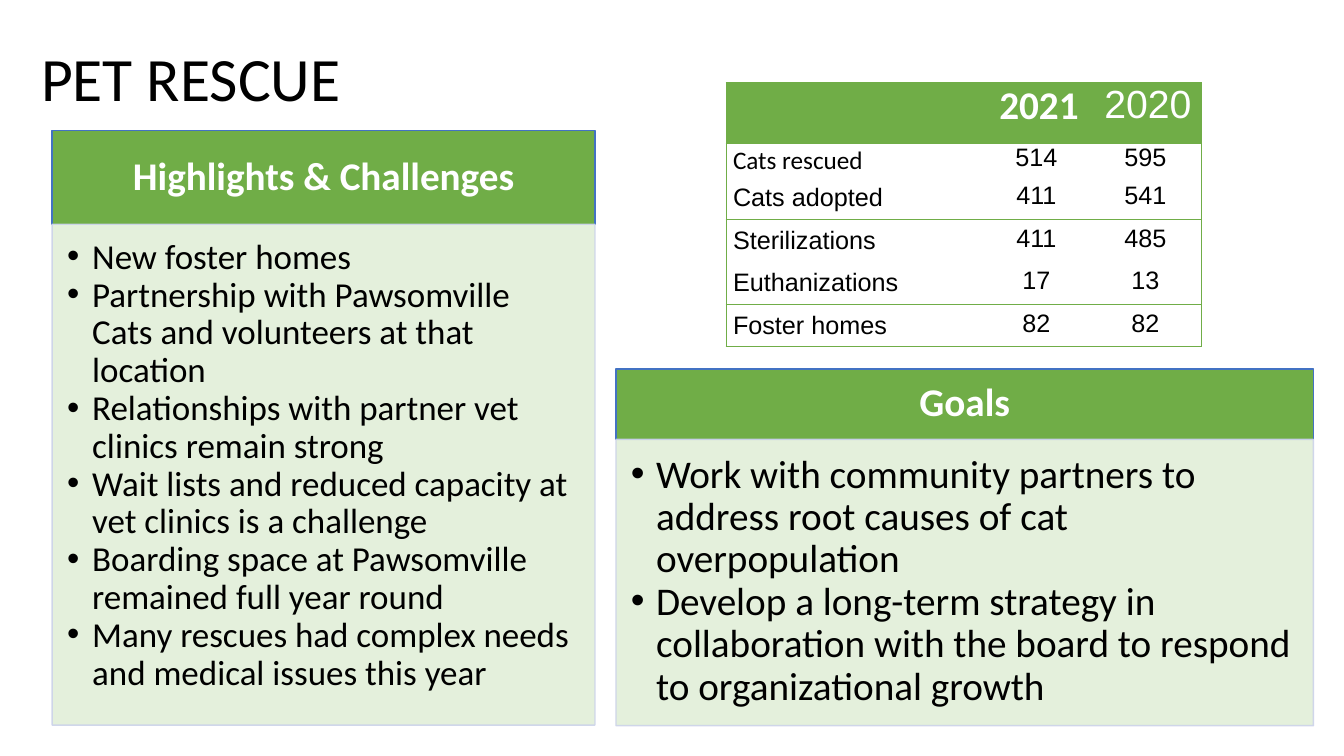
"""Build the pet rescue slide with two bulleted panels and a yearly table."""
from lxml.etree import SubElement
from pptx import Presentation
from pptx.dml.color import RGBColor
from pptx.enum.shapes import MSO_SHAPE as SHAPE
from pptx.enum.text import MSO_ANCHOR as ANCHOR, PP_ALIGN as ALIGN
from pptx.oxml.ns import qn
from pptx.util import Pt

COLORS = {
    "green": "70AD47", "pale": "E1EFD8", "blue": "4372C3",
    "edge": "CCD3EA", "white": "FFFFFF", "black": "000000",
}


def add_text(paragraph, text, size, color, font="Calibri", bold=False):
    run = paragraph.add_run()
    run.text = text
    run.font.name = font
    run.font.size = Pt(size)
    run.font.bold = bold
    run.font.color.rgb = RGBColor.from_string(COLORS[color])


def set_margins(target, left, top, right, bottom):
    target.margin_left, target.margin_top = Pt(left), Pt(top)
    target.margin_right, target.margin_bottom = Pt(right), Pt(bottom)


presentation = Presentation()
presentation.slide_width, presentation.slide_height = Pt(960), Pt(540)
slide = presentation.slides.add_slide(presentation.slide_layouts[6])

title = slide.shapes.add_textbox(Pt(22.3), Pt(5.8), Pt(828), Pt(104.4)).text_frame
title.word_wrap = True
title.vertical_anchor = ANCHOR.MIDDLE
title.paragraphs[0].line_spacing = 0.9
add_text(title.paragraphs[0], "PET RESCUE", 44, "black")

panels = [
    ("Highlights & Challenges", 37.2, 93.2, 387.8, 67, 357.8, 25, [
        "New foster homes",
        "Partnership with Pawsomville Cats and volunteers at that location",
        "Relationships with partner vet clinics remain strong",
        "Wait lists and reduced capacity at vet clinics is a challenge",
        "Boarding space at Pawsomville remained full year round",
        "Many rescues had complex needs and medical issues this year",
    ]),
    ("Goals", 440, 263.5, 498.2, 50.4, 204.5, 28, [
        "Work with community partners to address root causes of cat overpopulation",
        "Develop a long-term strategy in collaboration with the board to respond "
        "to organizational growth",
    ]),
]
for heading, left, top, width, head_height, body_height, size, bullets in panels:
    parts = [
        (top, head_height, "green", "blue", [heading]),
        (top + head_height, body_height, "pale", "edge", bullets),
    ]
    for part_top, height, fill, line, texts in parts:
        is_body = fill == "pale"
        shape = slide.shapes.add_shape(
            SHAPE.RECTANGLE, Pt(left), Pt(part_top), Pt(width), Pt(height))
        shape.shadow.inherit = False
        shape.fill.solid()
        shape.fill.fore_color.rgb = RGBColor.from_string(COLORS[fill])
        shape.line.color.rgb = RGBColor.from_string(COLORS[line])
        shape.line.width = Pt(1)
        frame = shape.text_frame
        frame.word_wrap = True
        if is_body:
            set_margins(frame, 10.7, 10.7, 14.2, 16)
            frame.vertical_anchor = ANCHOR.TOP
            for color in shape._element.spPr.iter(qn("a:srgbClr")):
                SubElement(color, qn("a:alpha"), val="89000")
        else:
            set_margins(frame, 14.2, 8.4, 14.2, 8.4)
            frame.vertical_anchor = ANCHOR.MIDDLE
        for index, text in enumerate(texts):
            paragraph = frame.add_paragraph() if index else frame.paragraphs[0]
            paragraph.line_spacing = 0.9
            paragraph.alignment = ALIGN.LEFT if is_body else ALIGN.CENTER
            if is_body:
                properties = paragraph._p.get_or_add_pPr()
                properties.set("marL", str(Pt(18)))
                properties.set("indent", str(Pt(-18)))
                SubElement(properties, qn("a:buFont"), typeface="Arial")
                SubElement(properties, qn("a:buChar"), char="•")
                add_text(paragraph, text, size, "black")
            else:
                add_text(paragraph, text, 28, "white", bold=True)

rows = [
    ("", "2021", "2020"),
    ("Cats rescued", "514", "595"),
    ("Cats adopted", "411", "541"),
    ("Sterilizations", "411", "485"),
    ("Euthanizations", "17", "13"),
    ("Foster homes", "82", "82"),
]
column_widths = [184.3, 74.9, 80.6]
row_heights = [43.5, 24] + [28.8] * 4
frame = slide.shapes.add_table(
    len(rows), len(column_widths), Pt(518.6), Pt(59),
    Pt(sum(column_widths)), Pt(sum(row_heights)))
table = frame.table
table.first_row = table.horz_banding = False
for column, width in zip(table.columns, column_widths):
    column.width = Pt(width)
for row, height in zip(table.rows, row_heights):
    row.height = Pt(height)

last_row, last_column = len(rows) - 1, len(column_widths) - 1
ruled_rows = (0, 1, 3, 5)
for r, values in enumerate(rows):
    for c, value in enumerate(values):
        cell = table.cell(r, c)
        padding = 3.6 if r > 1 else 0
        set_margins(cell, 5, padding, 5, padding)
        borders = {
            "a:lnL": c == 0,
            "a:lnR": c == last_column,
            "a:lnT": r in ruled_rows,
            "a:lnB": r == last_row or r + 1 in ruled_rows,
        }
        for tag, visible in borders.items():
            border = SubElement(cell._tc.get_or_add_tcPr(), qn(tag), w=str(Pt(0.75)))
            if visible:
                fill = SubElement(border, qn("a:solidFill"))
                SubElement(fill, qn("a:srgbClr"), val=COLORS["green"])
            else:
                SubElement(border, qn("a:noFill"))
        if r == 0:
            cell.fill.solid()
            cell.fill.fore_color.rgb = RGBColor.from_string(COLORS["green"])
        else:
            cell.fill.background()
        if not value:
            continue
        paragraph = cell.text_frame.paragraphs[0]
        if c:
            paragraph.alignment = ALIGN.CENTER
        else:
            paragraph.line_spacing = 1.07
        if r == 0:
            paragraph._p.get_or_add_pPr().set("marL", str(Pt(3.6)))
        is_calibri = value in ("2021", "Cats rescued")
        add_text(paragraph, value, 18 if r else 28, "black" if r else "white",
                 "Calibri" if is_calibri else "Arial", value == "2021")

presentation.save("out.pptx")
